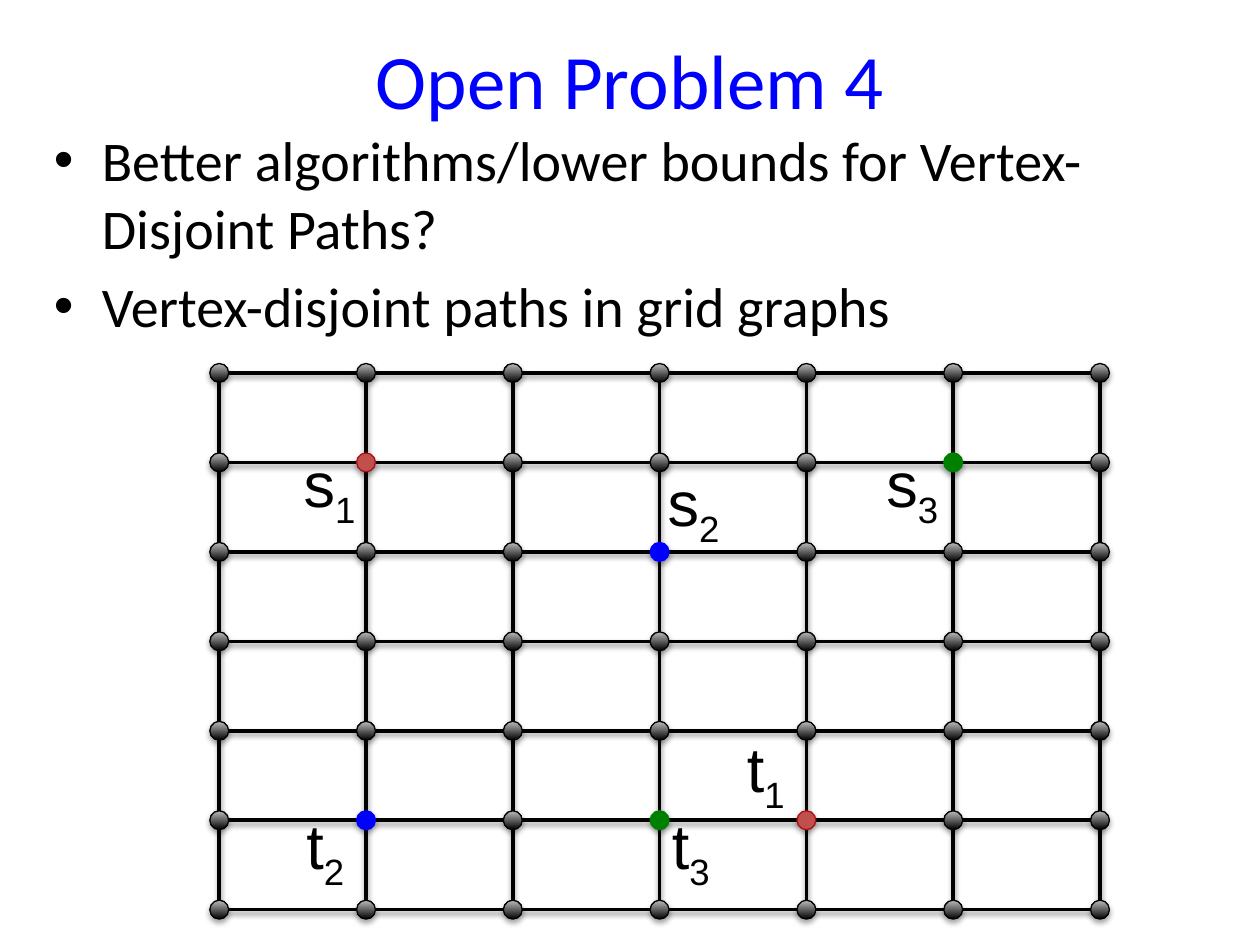
from pptx import Presentation, util as u
from pptx.dml.color import RGBColor
from pptx.enum import shapes, text
from pptx.oxml import parse_xml
from pptx.oxml.ns import nsdecls

COLORS = {
    "ink": "000000", "shine": "BDBDBD", "blue": "0000FF",
    "green": "008000", "red": "C0504D", "red edge": "AC0D11",
}
SIZE = 7  # vertices per side of the grid graph

# name, index, vertex (column, row), label corner (column, row), color
TERMINALS = [
    ("s", 1, (1, 1), (0.49, 0.73), "red"),
    ("t", 1, (4, 5), (3.51, 3.92), "red"),
    ("s", 2, (3, 2), (2.97, 0.94), "blue"),
    ("t", 2, (1, 5), (0.51, 4.78), "blue"),
    ("s", 3, (5, 1), (4.46, 0.73), "green"),
    ("t", 3, (3, 5), (3.0, 4.78), "green"),
]
QUESTIONS = [
    "Better algorithms/lower bounds for Vertex-Disjoint Paths?",
    "Vertex-disjoint paths in grid graphs",
]


def color(name):
    return RGBColor.from_string(COLORS[name])


def apply(target, values):
    for key, value in values.items():
        setattr(target, key, value)


class GridSlide:
    left, top, col, row = 1.74, 2.96, 1.165, 0.71
    node = 0.15
    title_font = {"name": "Calibri", "size": u.Pt(44)}
    body_font = {"name": "Calibri", "size": u.Pt(32)}
    label_font = {"name": "Arial", "size": u.Pt(36)}

    def __init__(self, deck):
        self.slide = deck.slides.add_slide(deck.slide_layouts[5])

    def point(self, col, row):
        """Turn a grid position into slide lengths."""
        return (u.Inches(self.left + col * self.col),
                u.Inches(self.top + row * self.row))

    def style(self, run, font, ink="ink"):
        apply(run.font, font)
        run.font.color.rgb = color(ink)

    def cast_shadow(self, item, distance, opacity):
        item._element.spPr.append(parse_xml(
            f'<a:effectLst {nsdecls("a")}><a:outerShdw blurRad="{u.Pt(3.1)}" '
            f'dist="{u.Pt(distance)}" dir="5400000" rotWithShape="0">'
            f'<a:srgbClr val="{COLORS["ink"]}"><a:alpha val="{opacity}000"/>'
            '</a:srgbClr></a:outerShdw></a:effectLst>'))

    def title(self, words):
        title = self.slide.shapes.title
        apply(title, {"left": u.Inches(0.5), "top": 0,
                      "width": u.Inches(9), "height": u.Inches(1.25)})
        title.text_frame.vertical_anchor = text.MSO_ANCHOR.MIDDLE
        paragraph = title.text_frame.paragraphs[0]
        paragraph.alignment = text.PP_ALIGN.CENTER
        run = paragraph.add_run()
        run.text = words
        self.style(run, self.title_font, "blue")

    def bullets(self, items):
        body = self.slide.shapes.add_textbox(
            u.Inches(0.33), u.Inches(0.95), u.Inches(9), u.Inches(4.95))
        frame = body.text_frame
        frame.word_wrap = True
        for i, item in enumerate(items):
            paragraph = frame.add_paragraph() if i else frame.paragraphs[0]
            paragraph.space_before = u.Pt(6.4)
            run = paragraph.add_run()
            run.text = item
            self.style(run, self.body_font)
            properties = paragraph._p.get_or_add_pPr()
            indent = u.Inches(0.38)
            properties.set("marL", str(indent))
            properties.set("indent", str(-indent))
            for mark in ('buFont {} typeface="Arial"', 'buChar {} char="•"'):
                properties.append(parse_xml(f'<a:{mark.format(nsdecls("a"))}/>'))

    def edge(self, start, end):
        line = self.slide.shapes.add_connector(
            shapes.MSO_CONNECTOR.STRAIGHT, *self.point(*start), *self.point(*end))
        line.line.color.rgb = color("ink")
        line.line.width = u.Pt(2)
        self.cast_shadow(line, 1.6, 38)

    def vertex(self, col, row, tint=None):
        x, y = self.point(col, row)
        size = u.Inches(self.node)
        dot = self.slide.shapes.add_shape(
            shapes.MSO_SHAPE.OVAL, x - size // 2, y - size // 2, size, size)
        if tint:
            dot.fill.solid()
            dot.fill.fore_color.rgb = color(tint)
        else:
            dot.fill.gradient()
            dot.fill.gradient_angle = 90
            for stop, shade in zip(dot.fill.gradient_stops, ("ink", "shine")):
                stop.color.rgb = color(shade)
        dot.line.color.rgb = color("red edge" if tint == "red" else tint or "ink")
        dot.line.width = u.Pt(0.75)
        self.cast_shadow(dot, 1.8, 35)

    def label(self, name, index, corner):
        box = self.slide.shapes.add_textbox(
            *self.point(*corner), u.Inches(0.66), u.Inches(0.71))
        box.text_frame.word_wrap = True
        paragraph = box.text_frame.paragraphs[0]
        for words in (name, str(index)):
            run = paragraph.add_run()
            run.text = words
            self.style(run, self.label_font)
        run.font._element.set("baseline", "-25000")

    def grid_graph(self, tints):
        last = SIZE - 1
        for col in range(SIZE):
            self.edge((col, 0.1), (col, last - 0.1))
        for row in range(SIZE):
            self.edge((0, row), (last, row))
            for col in reversed(range(SIZE)):
                self.vertex(col, row, tints.get((col, row)))


def main():
    deck = Presentation()
    apply(deck, {"slide_width": u.Inches(10), "slide_height": u.Inches(7.5)})
    page = GridSlide(deck)
    page.title("Open Problem 4")
    page.bullets(QUESTIONS)
    page.grid_graph({vertex: tint for _, _, vertex, _, tint in TERMINALS})
    for name, index, _, corner, _ in TERMINALS:
        page.label(name, index, corner)
    deck.save("out.pptx")


if __name__ == "__main__":
    main()
